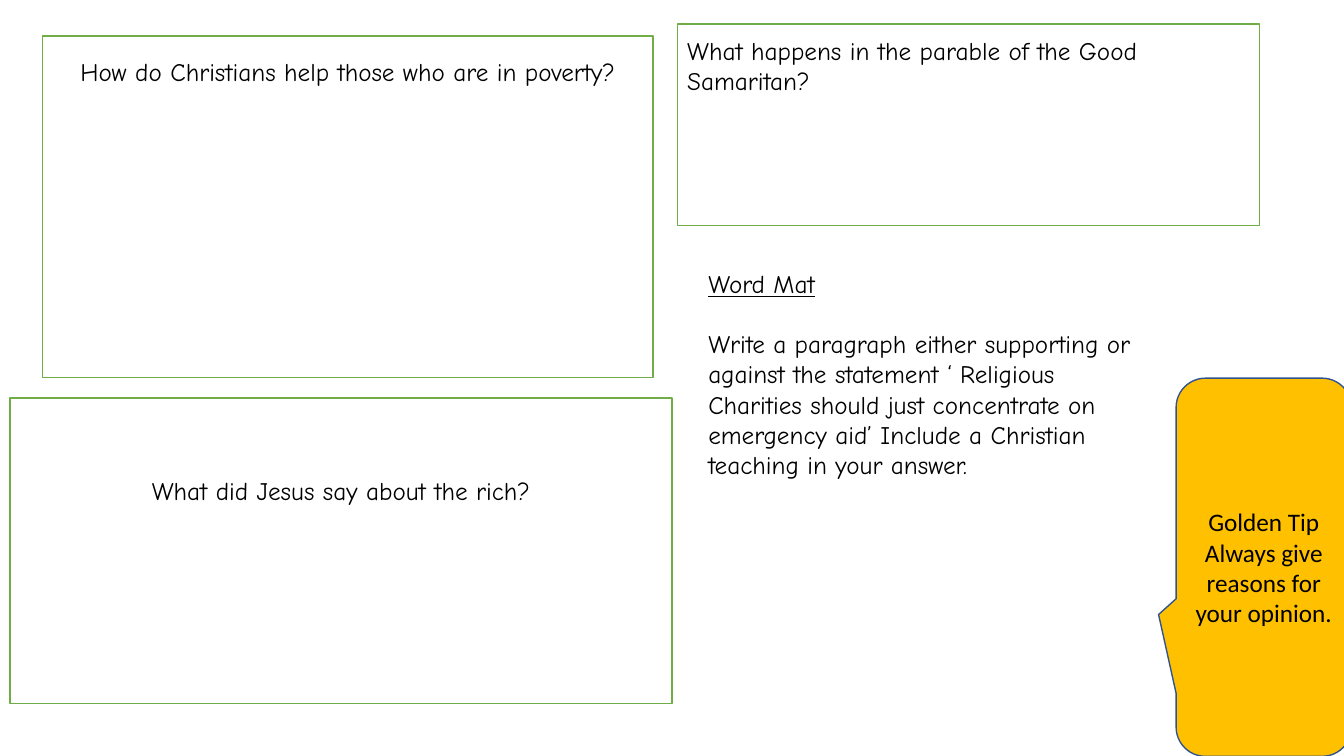
import pptx
import pptx.dml.color
import pptx.enum.shapes
import pptx.enum.text
import pptx.util

Cm = pptx.util.Cm
Pt = pptx.util.Pt
SHAPES = pptx.enum.shapes.MSO_SHAPE
ALIGN = pptx.enum.text.PP_ALIGN
ANCHOR = pptx.enum.text.MSO_ANCHOR
HAND_FONT = "Comic Neue"


def colour(value):
    return pptx.dml.color.RGBColor.from_string(value)


def write_paragraph(paragraph, text, font_name, align=ALIGN.LEFT, underline=False):
    paragraph.alignment = align
    run = paragraph.add_run()
    run.text = text
    run.font.name = font_name
    run.font.size = Pt(18)
    run.font.underline = underline
    run.font.color.rgb = colour("000000")


def add_panel(slide, kind, box, fill, line):
    shape = slide.shapes.add_shape(kind, *map(Cm, box))
    shape.shadow.inherit = False
    shape.fill.solid()
    shape.fill.fore_color.rgb = colour(fill)
    shape.line.color.rgb = colour(line)
    shape.line.width = Pt(1)
    shape.text_frame.word_wrap = True
    return shape


def add_question(slide, box, text, align, top_margin):
    shape = add_panel(slide, SHAPES.RECTANGLE, box, "FFFFFF", "70AD47")
    frame = shape.text_frame
    frame.vertical_anchor = ANCHOR.TOP
    frame.margin_top = Cm(top_margin)
    write_paragraph(frame.paragraphs[0], text, HAND_FONT, align)


def add_golden_tip(slide, box, lines):
    shape = add_panel(slide, SHAPES.ROUNDED_RECTANGULAR_CALLOUT, box, "FFC000", "31538F")
    for index, value in enumerate((-0.6, 0.125, 0.167)):
        shape.adjustments[index] = value
    frame = shape.text_frame
    frame.vertical_anchor = ANCHOR.MIDDLE
    for index, text in enumerate(lines):
        paragraph = frame.add_paragraph() if index else frame.paragraphs[0]
        write_paragraph(paragraph, text, "Calibri", ALIGN.CENTER)


def add_word_mat(slide, box, heading, task):
    frame = slide.shapes.add_textbox(*map(Cm, box)).text_frame
    frame.word_wrap = True
    write_paragraph(frame.paragraphs[0], heading, HAND_FONT, underline=True)
    frame.paragraphs[0].space_after = Pt(21.5)
    write_paragraph(frame.add_paragraph(), task, HAND_FONT)


def main():
    presentation = pptx.Presentation()
    presentation.slide_width = Cm(33.87)
    presentation.slide_height = Cm(19.05)
    slide = presentation.slides.add_slide(presentation.slide_layouts[6])

    add_question(slide, (1.07, 0.91, 15.39, 8.61),
                 "How do Christians help those who are in poverty?", ALIGN.CENTER, 0.5)
    add_question(slide, (0.25, 10.03, 16.69, 7.7),
                 "What did Jesus say about the rich?", ALIGN.CENTER, 1.94)
    add_question(slide, (17.07, 0.61, 14.68, 5.08),
                 "What happens in the parable of the Good Samaritan?", ALIGN.LEFT, 0.27)
    add_golden_tip(slide, (29.64, 9.53, 4.42, 9.53),
                   ("Golden Tip", "Always give reasons for your opinion."))
    add_word_mat(slide, (17.6, 6.63, 11.56, 6.4), "Word Mat",
                 "Write a paragraph either supporting or against the statement "
                 "‘ Religious Charities should just concentrate on emergency aid’ "
                 "Include a Christian teaching in your answer.")

    presentation.save("out.pptx")


if __name__ == "__main__":
    main()
